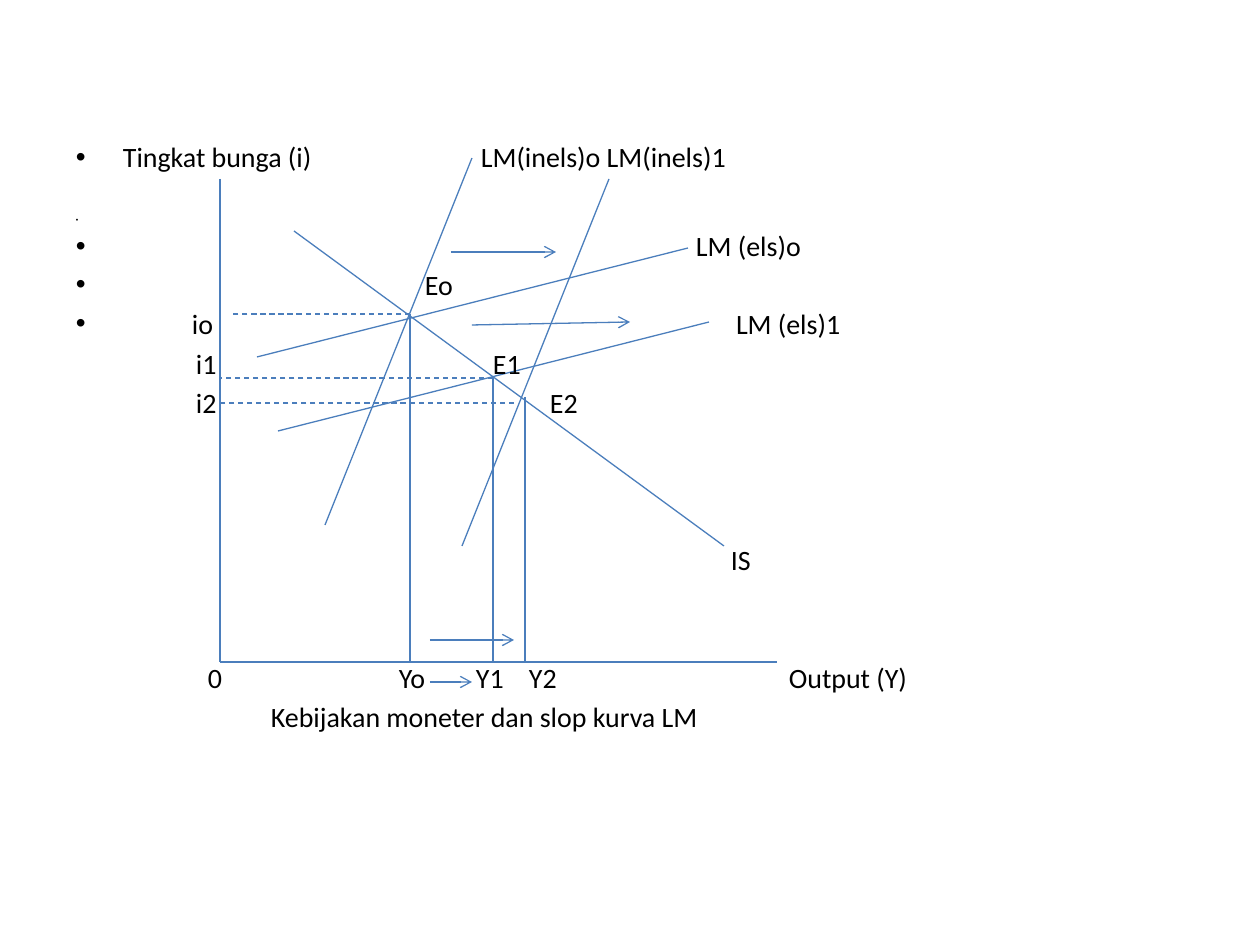
import dataclasses

import lxml.etree
import pptx
import pptx.dml.color
import pptx.enum.dml
import pptx.enum.shapes
import pptx.enum.text
import pptx.oxml.ns
import pptx.util

PIXELS_PER_INCH = 126


@dataclasses.dataclass(frozen=True)
class Theme:
    font: str = "Calibri"
    label_size: int = 16
    small_size: int = 4
    line_width: float = 0.75
    text: pptx.dml.color.RGBColor = pptx.dml.color.RGBColor(0, 0, 0)
    line: pptx.dml.color.RGBColor = pptx.dml.color.RGBColor(0x4B, 0x7E, 0xBC)


THEME = Theme()

# Bulleted rows: space before, type size, [(tab stop, text), ...]
BULLET_ROWS = [
    (5, THEME.label_size, [(47, "Tingkat bunga (i)"),
                           (405, "LM(inels)o LM(inels)1")]),
    (42, THEME.small_size, []),
    (5, THEME.label_size, [(620, "LM (els)o")]),
    (5, THEME.label_size, [(349, "Eo")]),
    (5, THEME.label_size, [(116, "io"), (660, "LM (els)1")]),
]

# Diagram labels: top, [(left, width, text), ...]
LABEL_ROWS = [
    (189, [(-24, 40, "i1"), (273, 40, "E1")]),
    (228, [(-24, 40, "i2"), (330, 40, "E2")]),
    (385, [(511, 40, "IS")]),
    (503, [(-12, 40, "0"), (179, 40, "Yo"), (256, 40, "Y1"),
           (309, 40, "Y2"), (569, 150, "Output (Y)")]),
    (542, [(51, 480, "Kebijakan moneter dan slop kurva LM")]),
]
LABEL_HEIGHT = 34


def px(value):
    return pptx.util.Emu(round(value * 914400 / PIXELS_PER_INCH))


def add_xml(parent, tag, **attributes):
    return lxml.etree.SubElement(parent, pptx.oxml.ns.qn(tag), attributes)


def add_text(paragraph, text, size):
    run = paragraph.add_run()
    run.text = text
    run.font.name = THEME.font
    run.font.size = pptx.util.Pt(size)
    run.font.color.rgb = THEME.text


def fill_bullet_row(paragraph, space_before, size, labels):
    """Set one bulleted row, each label at its own tab stop."""
    paragraph.space_before = pptx.util.Pt(
        round(space_before * 72 / PIXELS_PER_INCH, 2))
    properties = paragraph._p.get_or_add_pPr()
    properties.set("marL", "0")
    properties.set("indent", "0")
    add_xml(properties, "a:buFont", typeface="Arial")
    add_xml(properties, "a:buChar", char="•")
    if labels:
        tabs = add_xml(properties, "a:tabLst")
        for x, _ in labels:
            add_xml(tabs, "a:tab", pos=str(px(x)), algn="l")
    for text in [text for _, text in labels] or [""]:
        add_text(paragraph, "\t" + text, size)


def place_bullets(body, left, top, width, height):
    """Place the bulleted rows that name the axis and the LM curves."""
    body.left, body.top, body.width, body.height = map(
        px, (left, top, width, height))
    frame = body.text_frame
    frame.word_wrap = True
    frame.auto_size = pptx.enum.text.MSO_AUTO_SIZE.NONE
    frame.vertical_anchor = pptx.enum.text.MSO_ANCHOR.TOP
    frame.margin_left = frame.margin_right = px(13)
    frame.margin_top = px(46)
    for index, row in enumerate(BULLET_ROWS):
        paragraph = frame.add_paragraph() if index else frame.paragraphs[0]
        fill_bullet_row(paragraph, *row)


def place_labels(slide, left, top):
    """Place the labels of rates, equilibria and outputs on the diagram."""
    for y, labels in LABEL_ROWS:
        for x, width, text in labels:
            box = slide.shapes.add_textbox(
                px(left + x), px(top + y), px(width), px(LABEL_HEIGHT))
            frame = box.text_frame
            frame.word_wrap = True
            frame.margin_left = frame.margin_right = 0
            frame.margin_top = frame.margin_bottom = 0
            add_text(frame.paragraphs[0], text, THEME.label_size)


def draw_diagram(slide, left, top, width, height):
    """Draw the IS-LM diagram with its top-left corner at left, top."""

    def line(x1, y1, x2, y2, dashed=False, arrow=False):
        connector = slide.shapes.add_connector(
            pptx.enum.shapes.MSO_CONNECTOR.STRAIGHT,
            px(left + x1), px(top + y1), px(left + x2), px(top + y2))
        connector.line.color.rgb = THEME.line
        connector.line.width = pptx.util.Pt(THEME.line_width)
        if dashed:
            connector.line.dash_style = pptx.enum.dml.MSO_LINE.DASH
        if arrow:
            add_xml(connector.line._get_or_add_ln(), "a:tailEnd", type="arrow")
        add_xml(connector._element.spPr, "a:effectLst")

    # Axes
    line(0, 21, 0, height)
    line(width, height, 0, height)

    # IS curve
    line(74, 73, 504, 388)

    # Inelastic and elastic LM curves, before and after the shift
    for dx, dy in ((0, 0), (137, 21)):
        line(105 + dx, 367 + dy, 252 + dx, dy)
    for dx, dy in ((0, 0), (21, 74)):
        line(37 + dx, 199 + dy, 468 + dx, 90 + dy)

    # Interest rate guides
    for x1, x2, y in ((190, 11, 156), (273, 0, 220), (294, 0, 245)):
        line(x1, y, x2, y, dashed=True)

    # Output guides
    for x, y in ((190, 156), (273, 219), (305, 239)):
        line(x, y, x, height)

    # Shift arrows
    for ends in ((231, 94, 336, 94), (252, 167, 410, 164),
                 (210, 524, 252, 524), (210, 482, 294, 482)):
        line(*ends, arrow=True)

    place_labels(slide, left, top)


def main():
    presentation = pptx.Presentation()
    presentation.slide_width = px(1260)
    presentation.slide_height = px(945)
    slide = presentation.slides.add_slide(presentation.slide_layouts[1])
    title = slide.shapes.title._element
    title.getparent().remove(title)
    place_bullets(slide.placeholders[1], 63, 94, 1134, 750)
    draw_diagram(slide, 220, 158, 557, 504)
    presentation.save("out.pptx")


if __name__ == "__main__":
    main()
